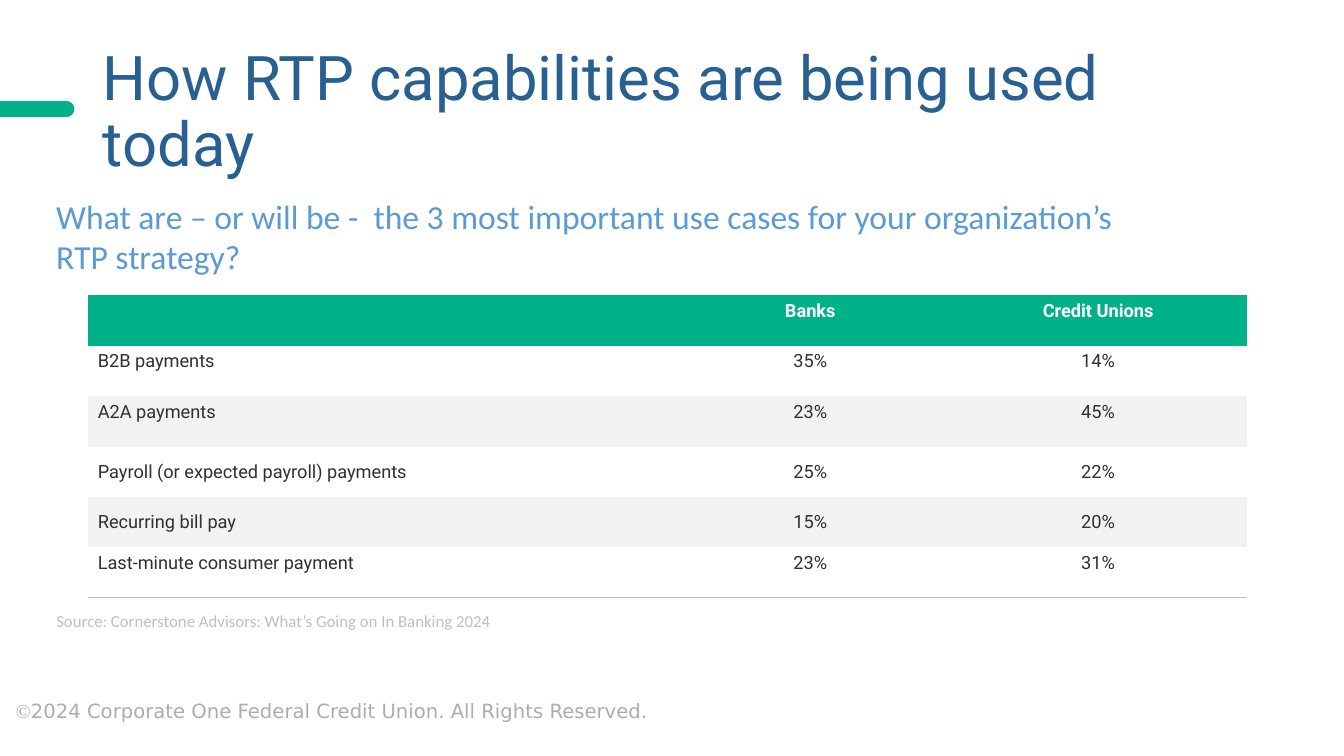
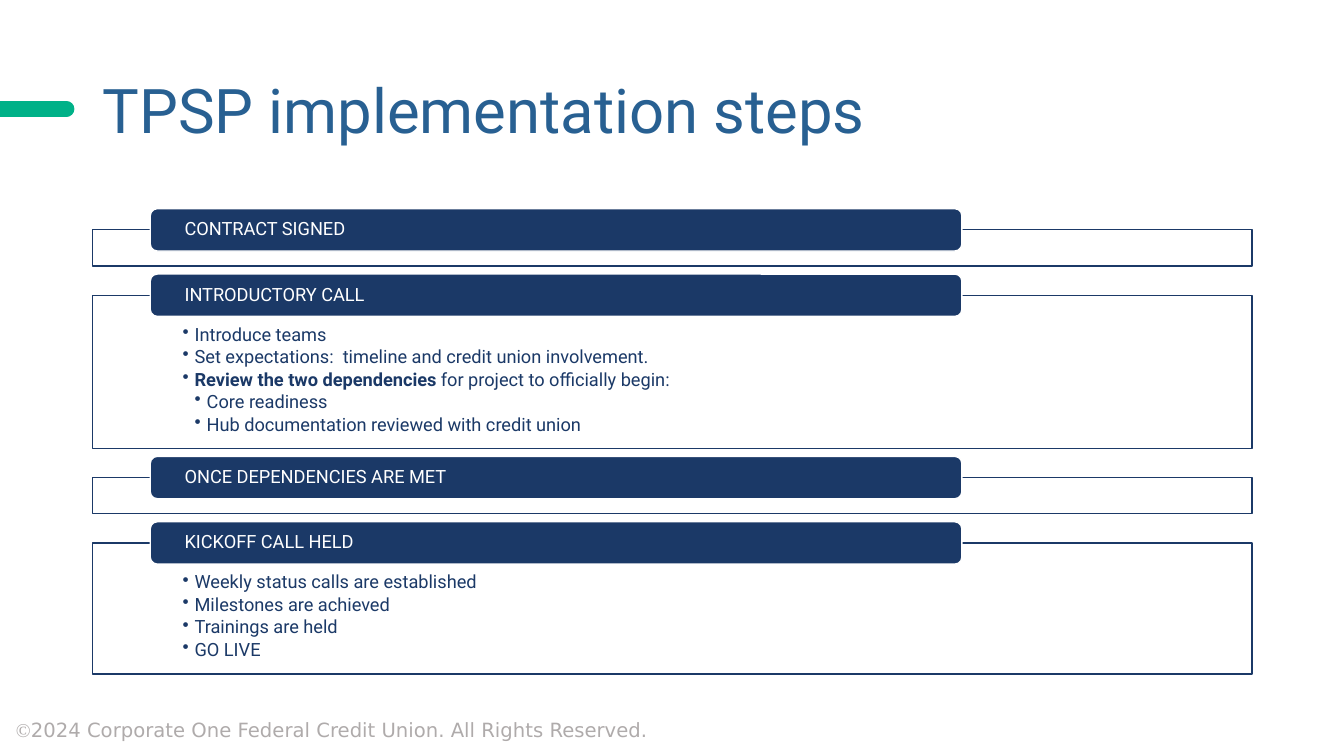
from lxml.etree import SubElement
from pptx import Presentation
from pptx.dml.color import RGBColor
from pptx.enum.shapes import MSO_CONNECTOR, MSO_SHAPE
from pptx.enum.text import MSO_ANCHOR, PP_ALIGN
from pptx.oxml import parse_xml
from pptx.oxml.ns import nsdecls, qn
from pptx.util import Inches, Pt

WIDE, HIGH = Inches(13.33), Inches(7.5)
GREEN, BLUE, NAVY, SKY = "00B188", "286092", "1B3967", "5B9BD5"
WHITE, INK, PALE, RULE, GRAY = "FFFFFF", "303030", "F2F2F2", "BFBFBF", "AFABAB"
PLAIN = "{2D5ABB26-0587-4C30-8999-92F81FD0307C}"
LEFT, SPAN = 6.9, 86.27

USES = [
    ("", "Banks", "Credit Unions"),
    ("B2B payments", "35%", "14%"),
    ("A2A payments", "23%", "45%"),
    ("Payroll (or expected payroll) payments", "25%", "22%"),
    ("Recurring bill pay", "15%", "20%"),
    ("Last-minute consumer payment", "23%", "31%"),
]
STEPS = [
    ("CONTRACT SIGNED", 4.8, []),
    ("INTRODUCTORY CALL", 20.27, [
        (0, "", "Introduce teams"),
        (0, "", "Set expectations:  timeline and credit union involvement."),
        (0, "Review the two dependencies ", "for project to officially begin:"),
        (1, "", "Core readiness"),
        (1, "", "Hub documentation reviewed with credit union"),
    ]),
    ("ONCE DEPENDENCIES ARE MET", 4.8, []),
    ("KICKOFF CALL HELD", 17.33, [
        (0, "", "Weekly status calls are established"),
        (0, "", "Milestones are achieved"),
        (0, "", "Trainings are held"),
        (0, "", "GO LIVE"),
    ]),
]


def color(code):
    return RGBColor.from_string(code)


def col(count):
    return int(WIDE * count / 100)


def row(count):
    return int(HIGH * count / 100)


def place(left, top, width, height):
    return col(left), row(top), col(width), row(height)


def style(para, size, code, face="Roboto", bold=False):
    font = para.font
    font.size, font.name, font.bold = Pt(size), face, bold
    font.color.rgb = color(code)


def label(slide, spot, text, size, code, face="Calibri"):
    frame = slide.shapes.add_textbox(*place(*spot)).text_frame
    frame.word_wrap = True
    para = frame.paragraphs[0]
    para.text = text
    style(para, size, code, face)
    return frame


def panel(slide, kind, spot, fill, line):
    shape = slide.shapes.add_shape(kind, *place(*spot))
    shape.shadow.inherit = False
    shape.fill.solid()
    shape.fill.fore_color.rgb = color(fill)
    shape.line.color.rgb = color(line)
    shape.line.width = Pt(1)
    return shape


def accent(slide):
    line = slide.shapes.add_connector(
        MSO_CONNECTOR.STRAIGHT, 0, row(14.4), col(4.95), row(14.4))
    line.line.color.rgb = color(GREEN)
    line.line.width = Pt(11.25)
    line.line._get_or_add_ln().set("cap", "rnd")
    SubElement(line._element.spPr, qn("a:effectLst"))


def footer(slide, top):
    frame = label(slide, (0.45, top, 49.14, 4.53), "", 14, GRAY, "DejaVu Sans")
    para = frame.paragraphs[0]
    mark = para.add_run()
    mark.text = "©"
    mark.font.name = "Times New Roman"
    para.add_run().text = ("2024 Corporate One Federal Credit Union. "
                           "All Rights Reserved.")


def page(deck, title, base):
    slide = deck.slides.add_slide(deck.slide_layouts[6])
    accent(slide)
    frame = label(slide, (LEFT, 5.33, SPAN, 19.33), title, 44, BLUE, "Roboto")
    frame.vertical_anchor = MSO_ANCHOR.MIDDLE
    frame.paragraphs[0].line_spacing = 0.9
    footer(slide, base)
    return slide


def border(cell):
    cell._tc.get_or_add_tcPr().insert(0, parse_xml(
        f'<a:lnB {nsdecls("a")} w="6350"><a:solidFill>'
        f'<a:srgbClr val="{RULE}"/></a:solidFill></a:lnB>'))


def grid(slide, rows):
    widths = (43.44, 20.63, 22.2)
    spot = place(6.53, 39.07, sum(widths), 6.67 * len(rows))
    table = slide.shapes.add_table(len(rows), len(widths), *spot).table
    table.first_row = table.horz_banding = False
    table._tbl.tblPr.find(qn("a:tableStyleId")).text = PLAIN
    for index, width in enumerate(widths):
        table.columns[index].width = col(width)
    for line, texts in enumerate(rows):
        table.rows[line].height = row(6.67)
        head = line == 0
        fill = GREEN if head else WHITE if line % 2 else PALE
        for index, text in enumerate(texts):
            cell = table.cell(line, index)
            cell.fill.solid()
            cell.fill.fore_color.rgb = color(fill)
            if line in (3, 4):
                cell.vertical_anchor = MSO_ANCHOR.MIDDLE
            if line == len(rows) - 1:
                border(cell)
            para = cell.text_frame.paragraphs[0]
            para.text = text
            para.alignment = PP_ALIGN.CENTER if index else PP_ALIGN.LEFT
            style(para, 13, WHITE if head else INK, bold=head)


def bullet(para, level, strong, text):
    para.level = level
    para.alignment = PP_ALIGN.LEFT
    para.line_spacing = 0.9
    para.space_after = Pt(2)
    props = para._p.get_or_add_pPr()
    props.set("marL", str(Inches(0.12 * (level + 1))))
    props.set("indent", str(-Inches(0.12)))
    SubElement(props, qn("a:buChar")).set("char", "•")
    style(para, 13, NAVY)
    if strong:
        run = para.add_run()
        run.text = strong
        run.font.bold = True
    para.add_run().text = text


def step(slide, top, name, height, items):
    card = panel(slide, MSO_SHAPE.RECTANGLE, (LEFT, top, SPAN, height), WHITE, NAVY)
    if items:
        body = card.text_frame
        body.word_wrap = True
        body.vertical_anchor = MSO_ANCHOR.TOP
        body.margin_left = body.margin_right = col(6.68)
        body.margin_top, body.margin_bottom = row(4), row(1.33)
        for index, item in enumerate(items):
            para = body.add_paragraph() if index else body.paragraphs[0]
            bullet(para, *item)
    tab = panel(slide, MSO_SHAPE.ROUNDED_RECTANGLE,
                (11.18, top - 2.8, 60.39, 5.6), NAVY, WHITE)
    frame = tab.text_frame
    frame.word_wrap = True
    frame.vertical_anchor = MSO_ANCHOR.MIDDLE
    frame.margin_left = frame.margin_right = col(2.4)
    frame.margin_top = frame.margin_bottom = 0
    para = frame.paragraphs[0]
    para.text = name
    para.alignment = PP_ALIGN.LEFT
    para.line_spacing = 0.9
    style(para, 13, WHITE)


def main():
    deck = Presentation()
    deck.slide_width, deck.slide_height = WIDE, HIGH

    usage = page(deck, "How RTP capabilities are being used today", 91.73)
    grid(usage, USES)
    label(usage, (3.45, 25.2, 84.17, 12.13),
          "What are – or will be -  the 3 most important use cases "
          "for your organization’s RTP strategy?", 24, SKY)
    label(usage, (3.45, 80.13, 73.9, 4),
          "Source: Cornerstone Advisors: What’s Going on In Banking 2024", 12, RULE)

    plan = page(deck, "TPSP implementation steps", 94.27)
    top = 30.4
    for name, height, items in STEPS:
        step(plan, top, name, height, items)
        top += height + 3.85

    deck.save("out.pptx")


if __name__ == "__main__":
    main()
